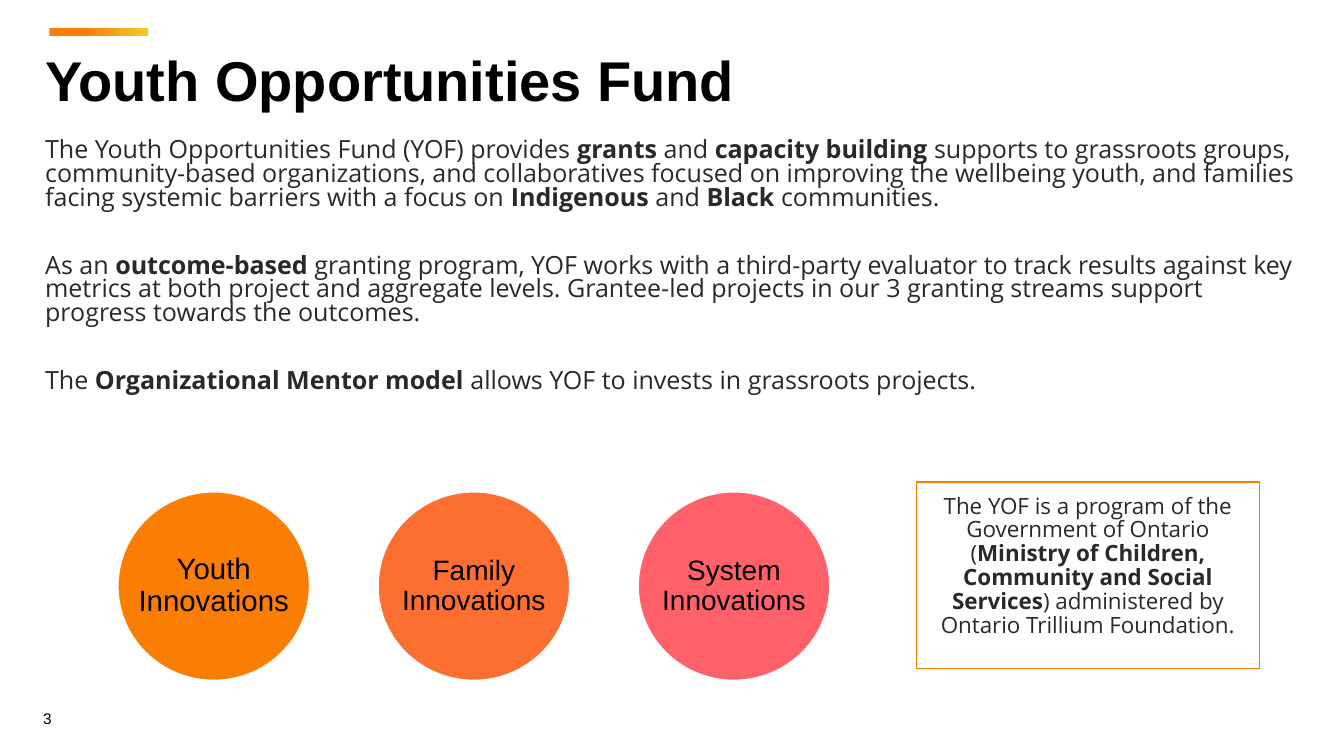
from pptx import Presentation
from pptx.dml.color import RGBColor
from pptx.enum.shapes import MSO_SHAPE as SHAPE
from pptx.enum.text import MSO_ANCHOR as ANCHOR, MSO_AUTO_SIZE as AUTO, PP_ALIGN as ALIGN
from pptx.util import Inches, Pt

BLACK = RGBColor(0x00, 0x00, 0x00)
WHITE = RGBColor(0xFF, 0xFF, 0xFF)
INK = RGBColor(0x29, 0x29, 0x29)
ORANGE = RGBColor(0xFA, 0x7E, 0x04)
CORAL = RGBColor(0xFC, 0x6F, 0x30)
PINK = RGBColor(0xFE, 0x61, 0x69)
YELLOW = RGBColor(0xF0, 0xCD, 0x2D)

TITLE = {"name": "Arial", "size": Pt(40), "bold": True}
BODY = {"name": "Open Sans", "size": Pt(17.9)}
NOTE = {"name": "Open Sans", "size": Pt(16)}
NUMBER = {"name": "Arial", "size": Pt(11)}

PARAGRAPHS = [
    "The Youth Opportunities Fund (YOF) provides *grants *and *capacity building *"
    "supports to grassroots groups, community-based organizations, and collaboratives "
    "focused on improving the wellbeing youth, and families facing systemic barriers "
    "with a focus on *Indigenous* and *Black* communities.",
    "As an *outcome-based* granting program, YOF works with a third-party evaluator to "
    "track results against key metrics at both project and aggregate levels. Grantee-led "
    "projects in our 3 granting streams support progress towards the outcomes.",
    "The *Organizational Mentor model *allows YOF to invests in grassroots projects.",
]
NOTE_TEXT = (
    "The YOF is a program of the Government of Ontario (*Ministry of Children, Community "
    "and Social Services*) administered by Ontario Trillium Foundation."
)
STREAMS = [
    ("Youth Innovations", ORANGE, 21),
    ("Family Innovations", CORAL, 20),
    ("System Innovations", PINK, 20),
]


def set_attrs(obj, values):
    for name, value in values.items():
        setattr(obj, name, value)


def set_frame(tf, anchor, inset_x=0.1, inset_y=0.05):
    set_attrs(tf, {
        "word_wrap": True, "auto_size": AUTO.NONE, "vertical_anchor": anchor,
        "margin_left": Inches(inset_x), "margin_right": Inches(inset_x),
        "margin_top": Inches(inset_y), "margin_bottom": Inches(inset_y),
    })


def write(p, text, font, color, layout):
    set_attrs(p, layout)
    for i, part in enumerate(text.split("*")):
        r = p.add_run()
        r.text = part
        set_attrs(r.font, {"bold": i % 2 == 1, **font})
        r.font.color.rgb = color


def add_box(s, x, y, w, h):
    return s.shapes.add_textbox(Inches(x), Inches(y), Inches(w), Inches(h))


def add_shape(s, kind, x, y, w, h, fill=None, line=None):
    sp = s.shapes.add_shape(kind, Inches(x), Inches(y), Inches(w), Inches(h))
    sp.shadow.inherit = False
    if fill is not None:
        sp.fill.solid()
        sp.fill.fore_color.rgb = fill
    if line is None:
        sp.line.fill.background()
    else:
        sp.line.color.rgb = line
        sp.line.width = Pt(1)
    return sp


def add_accent(s, x, y, w, h):
    fill = add_shape(s, SHAPE.RECTANGLE, x, y, w, h).fill
    fill.gradient()
    fill.gradient_angle = 0
    for stop, position, color in zip(fill.gradient_stops, (0.36, 1), (ORANGE, YELLOW)):
        stop.position = position
        stop.color.rgb = color


def add_title(s, x, y, w, h):
    sp = s.shapes.title
    set_attrs(sp, {"left": Inches(x), "top": Inches(y), "width": Inches(w), "height": Inches(h)})
    set_frame(sp.text_frame, ANCHOR.MIDDLE)
    write(sp.text_frame.paragraphs[0], "Youth Opportunities Fund", TITLE, BLACK,
          {"alignment": ALIGN.LEFT})


def add_body(s, x, y, w, h):
    tf = add_box(s, x, y, w, h).text_frame
    set_frame(tf, ANCHOR.TOP)
    for i, text in enumerate(PARAGRAPHS):
        p = tf.add_paragraph() if i else tf.paragraphs[0]
        write(p, text, BODY, INK,
              {"line_spacing": 0.79, "space_before": Pt(31.5 if i else 0)})


def add_streams(s, x, y, w, h, pitch):
    label_w, label_h = 1.5, 1.32
    for i, (text, color, size) in enumerate(STREAMS):
        left = x + i * pitch
        add_shape(s, SHAPE.OVAL, left, y, w, h, color, WHITE)
        tf = add_box(s, left + (w - label_w) / 2, y + (h - label_h) / 2, label_w, label_h).text_frame
        set_frame(tf, ANCHOR.MIDDLE, 0, 0)
        write(tf.paragraphs[0], text, {"name": "Arial", "size": Pt(size)}, BLACK,
              {"alignment": ALIGN.CENTER, "line_spacing": 0.9})


def add_note(s, x, y, w, h):
    tf = add_shape(s, SHAPE.RECTANGLE, x, y, w, h, WHITE, ORANGE).text_frame
    set_frame(tf, ANCHOR.TOP, 0.12, 0.13)
    write(tf.paragraphs[0], NOTE_TEXT, NOTE, INK,
          {"alignment": ALIGN.CENTER, "line_spacing": 0.89})


def add_number(s, x, y, w, h):
    tf = add_box(s, x, y, w, h).text_frame
    set_frame(tf, ANCHOR.MIDDLE)
    write(tf.paragraphs[0], "3", NUMBER, BLACK, {"alignment": ALIGN.CENTER})


def main():
    prs = Presentation()
    prs.slide_width, prs.slide_height = Inches(13.33), Inches(7.5)
    s = prs.slides.add_slide(prs.slide_layouts[5])
    add_number(s, 0.18, 6.98, 0.58, 0.3)
    add_accent(s, 0.49, 0.28, 0.98, 0.08)
    add_title(s, 0.35, 0.4, 12.52, 0.77)
    add_body(s, 0.35, 1.34, 12.7, 3.44)
    add_streams(s, 1.17, 4.88, 1.9, 1.87, 2.58)
    add_note(s, 9.09, 4.78, 3.4, 1.85)
    prs.save("out.pptx")


if __name__ == "__main__":
    main()
